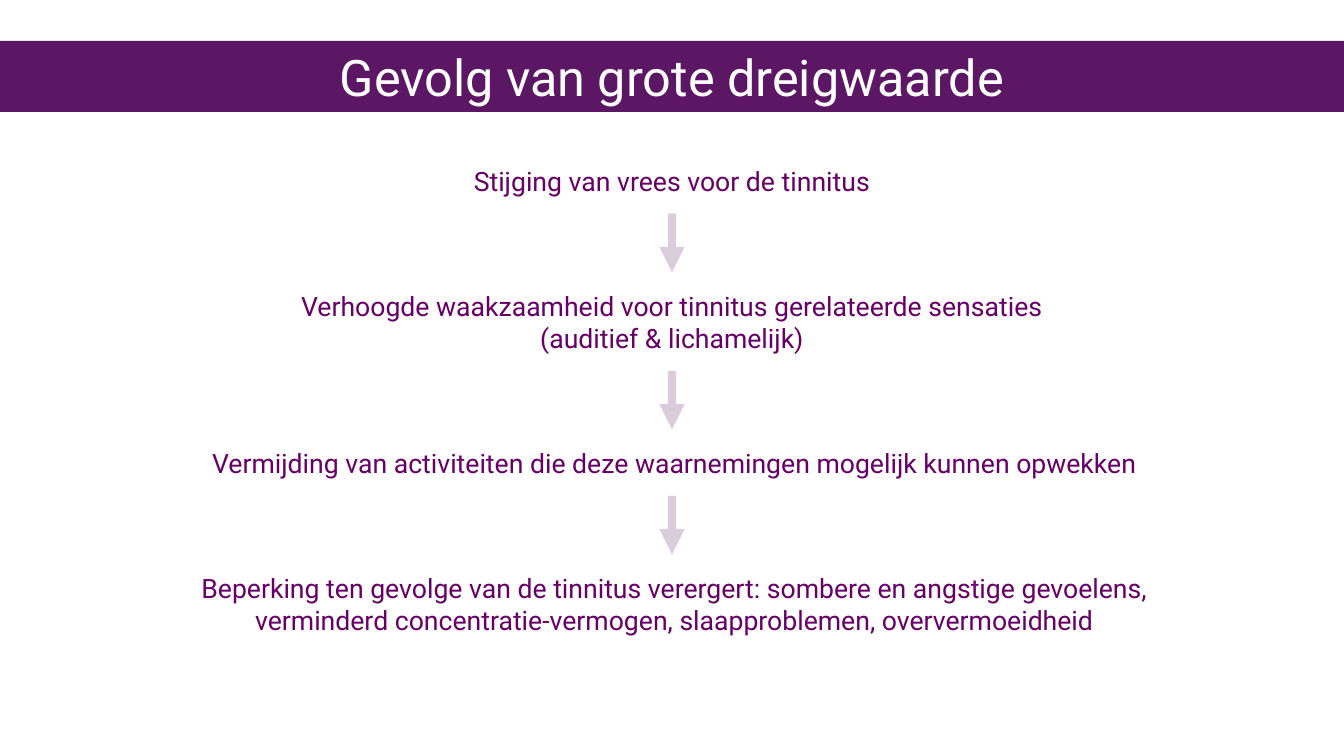
from lxml import etree
from pptx import Presentation
from pptx import util as u
from pptx.dml.color import RGBColor
from pptx.enum import shapes, text
from pptx.oxml import ns

BAND = RGBColor(0x5C, 0x17, 0x64)
PURPLE = RGBColor(0x66, 0x00, 0x66)
WHITE = RGBColor(0xFF, 0xFF, 0xFF)

SLIDE_WIDTH, SLIDE_HEIGHT = 26.67, 15
STEP_WIDTH = 20.69
GAP = 0.25
ARROW_LENGTH = 1.16
ONE_LINE, TWO_LINES = 0.82, 1.46

# Left edge, height and paragraphs of each step in the chain
STEPS = [
    (2.99, ONE_LINE, ["Stijging van vrees voor de tinnitus"]),
    (2.99, TWO_LINES, ["Verhoogde waakzaamheid voor tinnitus gerelateerde sensaties",
                       "(auditief & lichamelijk)"]),
    (3.04, ONE_LINE, ["Vermijding van activiteiten die deze waarnemingen "
                      "mogelijk kunnen opwekken"]),
    (3.04, TWO_LINES, ["Beperking ten gevolge van de tinnitus verergert: sombere en "
                       "angstige gevoelens, verminderd concentratie-vermogen, "
                       "slaapproblemen, oververmoeidheid"]),
]


class ConsequenceSlide:
    font = "Roboto"

    def __init__(self, slide):
        self.slide = slide

    def fill_text(self, frame, paragraphs, size, color):
        frame.word_wrap = True
        frame.margin_left = frame.margin_right = u.Inches(0.1)
        frame.margin_top = frame.margin_bottom = u.Inches(0.1)
        for i, wording in enumerate(paragraphs):
            paragraph = frame.add_paragraph() if i else frame.paragraphs[0]
            paragraph.text = wording
            paragraph.alignment = text.PP_ALIGN.CENTER
            paragraph.font.name = self.font
            paragraph.font.size = u.Pt(size)
            paragraph.font.color.rgb = color

    def title_band(self, wording, top, height):
        band = self.slide.shapes.add_shape(
            shapes.MSO_SHAPE.RECTANGLE, 0, u.Inches(top),
            u.Inches(SLIDE_WIDTH), u.Inches(height))
        band.shadow.inherit = False
        band.fill.solid()
        band.fill.fore_color.rgb = BAND
        band.line.fill.background()
        band.text_frame.vertical_anchor = text.MSO_ANCHOR.MIDDLE
        self.fill_text(band.text_frame, [wording], 72, WHITE)

    def step(self, left, top, height, paragraphs):
        box = self.slide.shapes.add_textbox(
            u.Inches(left), u.Inches(top), u.Inches(STEP_WIDTH), u.Inches(height))
        self.fill_text(box.text_frame, paragraphs, 38, PURPLE)

    def down_arrow(self, top):
        center = u.Inches(SLIDE_WIDTH / 2)
        arrow = self.slide.shapes.add_connector(
            shapes.MSO_CONNECTOR.STRAIGHT, center, u.Inches(top),
            center, u.Inches(top + ARROW_LENGTH))
        arrow.line.width = u.Pt(12)
        arrow.line.color.rgb = BAND
        line = arrow.line._get_or_add_ln()
        # Transparency, arrowhead and no shadow
        color = line.find(".//" + ns.qn("a:srgbClr"))
        etree.SubElement(color, ns.qn("a:alpha"), val="22000")
        etree.SubElement(line, ns.qn("a:tailEnd"), type="triangle")
        etree.SubElement(line.getparent(), ns.qn("a:effectLst"))


def main():
    deck = Presentation()
    deck.slide_width = u.Inches(SLIDE_WIDTH)
    deck.slide_height = u.Inches(SLIDE_HEIGHT)
    page = ConsequenceSlide(deck.slides.add_slide(deck.slide_layouts[6]))

    # Title
    page.title_band("Gevolg van grote dreigwaarde", 0.81, 1.41)

    # Chain of steps, with an arrow before all but the first
    top = 3.17
    for i, (left, height, paragraphs) in enumerate(STEPS):
        if i:
            page.down_arrow(top + GAP)
            top += ARROW_LENGTH + 2 * GAP
        page.step(left, top, height, paragraphs)
        top += height

    deck.save("out.pptx")


if __name__ == "__main__":
    main()
